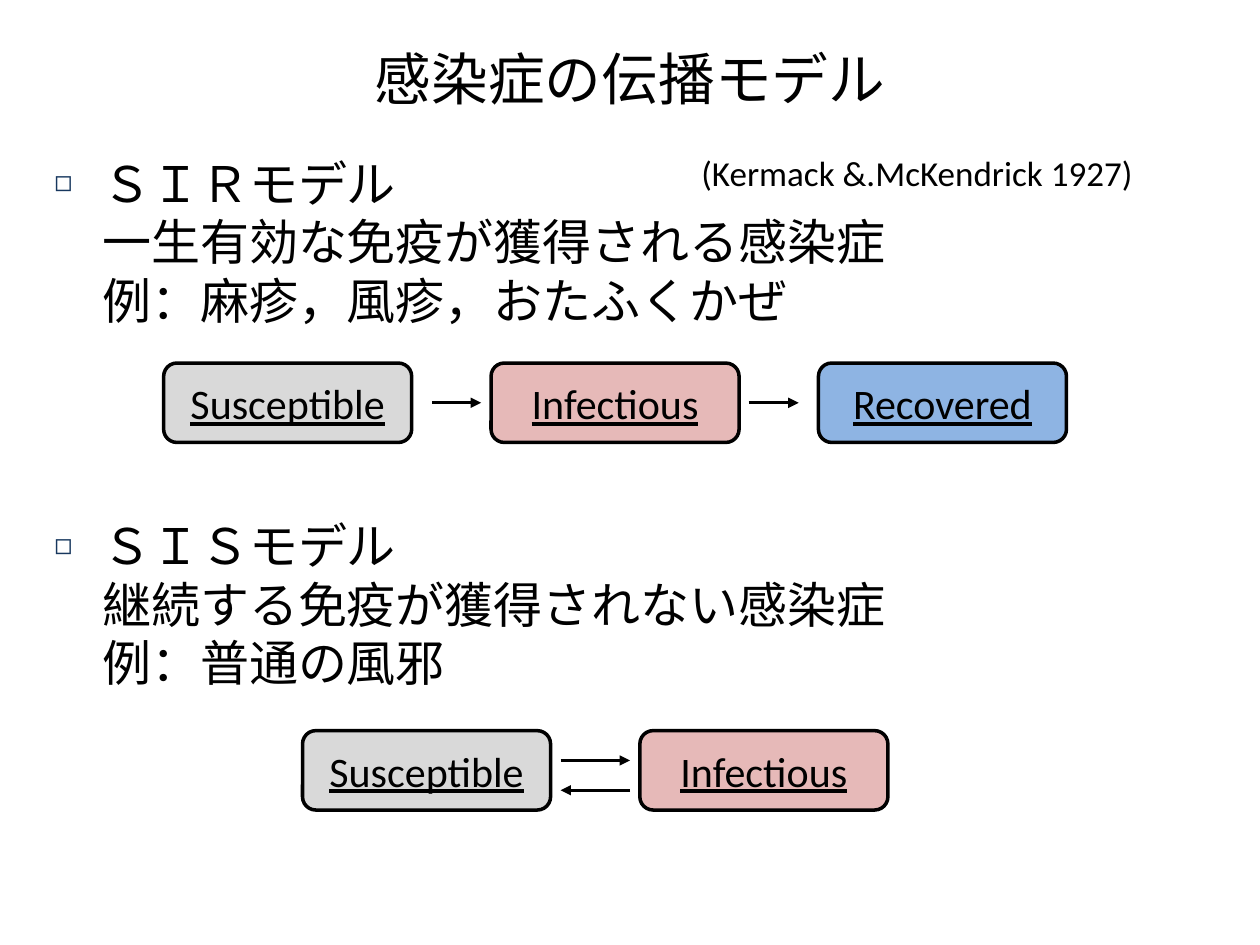
from lxml import etree
from pptx import Presentation
from pptx.dml.color import RGBColor
from pptx.enum.shapes import MSO_CONNECTOR, MSO_SHAPE
from pptx.enum.text import MSO_ANCHOR, MSO_AUTO_SIZE, PP_ALIGN
from pptx.oxml.ns import qn
from pptx.util import Cm, Pt

ROUNDED = MSO_SHAPE.ROUNDED_RECTANGLE
STRAIGHT = MSO_CONNECTOR.STRAIGHT
MIDDLE, TOP = MSO_ANCHOR.MIDDLE, MSO_ANCHOR.TOP
CENTER, LEFT = PP_ALIGN.CENTER, PP_ALIGN.LEFT
NO_FIT, GROW = MSO_AUTO_SIZE.NONE, MSO_AUTO_SIZE.SHAPE_TO_FIT_TEXT

COLORS = {
    "text": "000000",
    "bullet": "17375E",
    "Susceptible": "D9D9D9",
    "Infectious": "E6B9B8",
    "Recovered": "8EB4E3",
}
TITLE = "感染症の伝播モデル"
CITATION = "(Kermack &.McKendrick 1927)"
MODELS = [
    ("ＳＩＲ", "モデル", ["一生有効な免疫が獲得される感染症", "例：麻疹，風疹，おたふくかぜ"]),
    ("ＳＩＳ", "モデル", ["継続する免疫が獲得されない感染症", "例：普通の風邪"]),
]
DIAGRAMS = [
    {
        "states": ["Susceptible", "Infectious", "Recovered"],
        "left": 3.3, "top": 7.32, "step": 6.6,
        "arrows": [(8.71, 9.7, 0.8), (15.09, 16.1, 0.8)],
    },
    {
        "states": ["Susceptible", "Infectious"],
        "left": 6.1, "top": 14.73, "step": 6.8,
        "arrows": [(11.3, 12.7, 0.6), (12.7, 11.3, 1.2)],
    },
]
BOX_WIDTH, BOX_HEIGHT = 5, 1.6


def rgb(name):
    return RGBColor.from_string(COLORS[name])


def place(shape, left, top, width, height):
    shape.left, shape.top = Cm(left), Cm(top)
    shape.width, shape.height = Cm(width), Cm(height)


def format_runs(para, size, font="Calibri", underline=None):
    for span in para.runs:
        span.font.name = font
        span.font.size = Pt(size)
        span.font.underline = underline
        span.font.color.rgb = rgb("text")


def add_bullet(para):
    props = para._p.get_or_add_pPr()
    props.set("marL", str(Cm(0.97)))
    props.set("indent", str(-Cm(0.97)))
    color = etree.SubElement(props, qn("a:buClr"))
    etree.SubElement(color, qn("a:srgbClr"), val=COLORS["bullet"])
    etree.SubElement(props, qn("a:buSzPct"), val="60000")
    etree.SubElement(props, qn("a:buChar"), char="◻")


def add_state(slide, state, left, top):
    box = slide.shapes.add_shape(ROUNDED, Cm(left), Cm(top), Cm(BOX_WIDTH), Cm(BOX_HEIGHT))
    box.shadow.inherit = False
    box.fill.solid()
    box.fill.fore_color.rgb = rgb(state)
    box.line.color.rgb = rgb("text")
    box.line.width = Pt(2)
    box.text_frame.text = state
    box.text_frame.vertical_anchor = MIDDLE
    para = box.text_frame.paragraphs[0]
    para.alignment = CENTER
    format_runs(para, 24, underline=True)


def add_arrow(slide, start, end, height):
    arrow = slide.shapes.add_connector(STRAIGHT, Cm(start), Cm(height), Cm(end), Cm(height))
    arrow.line.color.rgb = rgb("text")
    arrow.line.width = Pt(1.5)
    etree.SubElement(arrow.line._get_or_add_ln(), qn("a:tailEnd"), type="triangle")
    etree.SubElement(arrow._element.spPr, qn("a:effectLst"))


def fill_title(title):
    place(title, 1.27, 0.76, 22.86, 1.63)
    title.text_frame.text = TITLE
    title.text_frame.auto_size = NO_FIT
    title.text_frame.vertical_anchor = MIDDLE
    para = title.text_frame.paragraphs[0]
    para.alignment = CENTER
    format_runs(para, 32.4)


def fill_body(body):
    place(body, 0.84, 2.97, 21.67, 12.75)
    frame = body.text_frame
    frame.auto_size = NO_FIT
    frame.vertical_anchor = TOP
    for index, (name, suffix, lines) in enumerate(MODELS):
        para = frame.add_paragraph() if index else frame.paragraphs[0]
        para.alignment = LEFT
        para.line_spacing = Pt(33.4)
        para.space_before = Pt(107 if index else 5.6)
        add_bullet(para)
        para.add_run().text = name
        para.add_run().text = suffix
        for line in lines:
            para.add_line_break()
            para.add_run().text = line
        format_runs(para, 28)
        para.runs[0].font.name = "Arial"


def add_citation(slide):
    box = slide.shapes.add_textbox(Cm(13.89), Cm(2.92), Cm(10.59), Cm(1.12))
    box.text_frame.word_wrap = True
    box.text_frame.auto_size = GROW
    box.text_frame.text = CITATION
    format_runs(box.text_frame.paragraphs[0], 20)


def main():
    deck = Presentation()
    deck.slide_width, deck.slide_height = Cm(25.4), Cm(19.05)
    slide = deck.slides.add_slide(deck.slide_layouts[1])
    fill_title(slide.shapes.title)
    fill_body(slide.placeholders[1])
    add_citation(slide)
    for diagram in DIAGRAMS:
        for index, state in enumerate(diagram["states"]):
            add_state(slide, state, diagram["left"] + index * diagram["step"], diagram["top"])
        for start, end, offset in diagram["arrows"]:
            add_arrow(slide, start, end, diagram["top"] + offset)
    deck.save("out.pptx")


if __name__ == "__main__":
    main()
